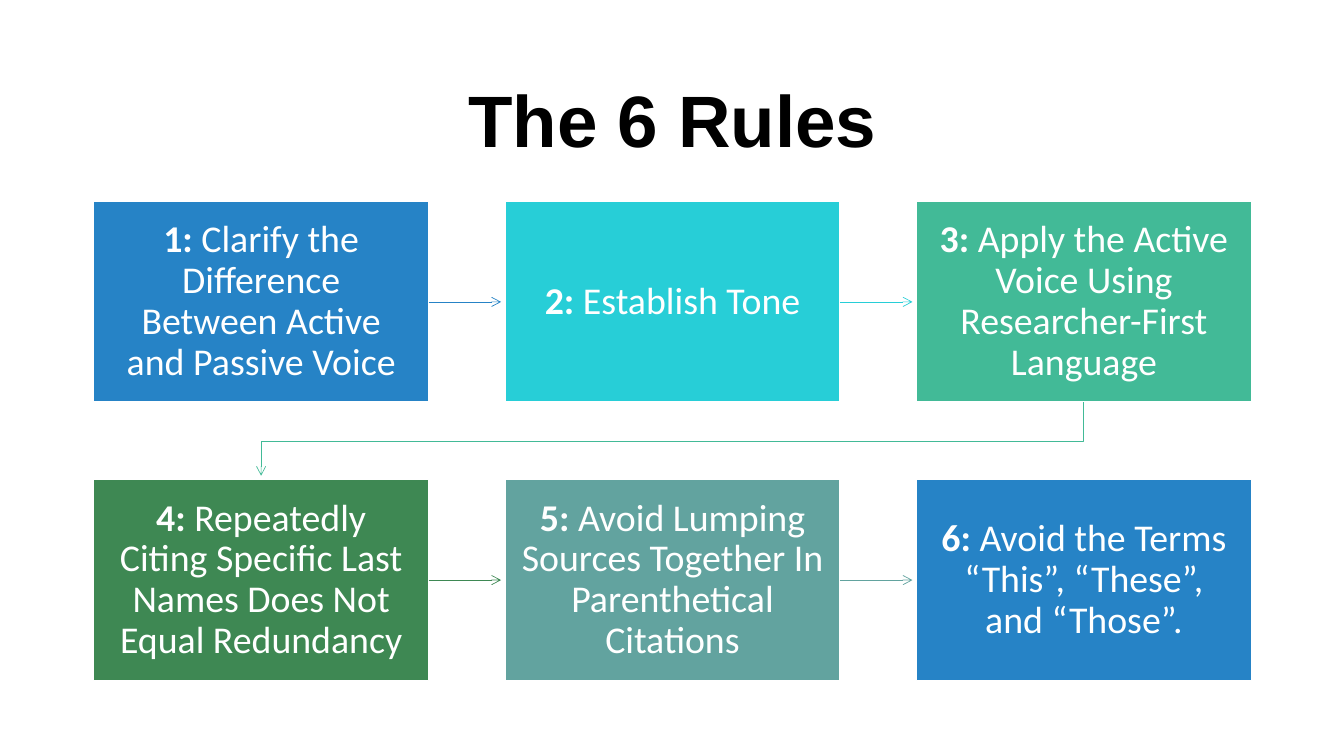
from dataclasses import dataclass

from lxml import etree
from pptx import Presentation
from pptx.dml.color import RGBColor
from pptx.dml.line import LineFormat
from pptx.enum.shapes import MSO_CONNECTOR, MSO_SHAPE
from pptx.enum.text import MSO_ANCHOR, PP_ALIGN
from pptx.oxml.ns import qn
from pptx.shapes.autoshape import Shape
from pptx.slide import Slide
from pptx.text.text import TextFrame
from pptx.util import Inches, Pt

STRAIGHT = MSO_CONNECTOR.STRAIGHT
RECTANGLE = MSO_SHAPE.RECTANGLE
MIDDLE = MSO_ANCHOR.MIDDLE
CENTER = PP_ALIGN.CENTER
RIGHT_SIDE = 3


@dataclass(frozen=True)
class Theme:
    blue: str = "2683C6"
    cyan: str = "27CED7"
    mint: str = "42BA97"
    green: str = "3E8853"
    teal: str = "62A39F"
    white: str = "FFFFFF"
    black: str = "000000"
    title_font: str = "Arial"
    rule_font: str = "Calibri"
    title_size: float = 52
    rule_size: float = 27
    border: float = 1
    arrow: float = 0.5


@dataclass(frozen=True)
class Rule:
    text: str
    color: str


THEME = Theme()
RULES = [
    Rule("Clarify the Difference Between Active and Passive Voice", THEME.blue),
    Rule("Establish Tone", THEME.cyan),
    Rule("Apply the Active Voice Using Researcher-First Language", THEME.mint),
    Rule("Repeatedly Citing Specific Last Names Does Not Equal Redundancy", THEME.green),
    Rule("Avoid Lumping Sources Together In Parenthetical Citations", THEME.teal),
    Rule("Avoid the Terms “This”, “These”, and “Those”.", THEME.blue),
]

# Grid of rule boxes, in inches
COLUMNS = 3
LEFT, TOP = 0.93, 2.0
BOX_W, BOX_H = 3.32, 1.99
STEP_X, STEP_Y = 4.08, 2.76
ARROW_GAP = 0.04

RULE_FRAME = {
    "word_wrap": True,
    "vertical_anchor": MIDDLE,
    "margin_left": Inches(0.16),
    "margin_right": Inches(0.16),
    "margin_top": Inches(0.17),
    "margin_bottom": Inches(0.17),
}
TITLE_FRAME = {"word_wrap": True, "vertical_anchor": MIDDLE}
PARAGRAPH = {"alignment": CENTER, "line_spacing": 0.9}
RULE_FONT = {"name": THEME.rule_font, "size": Pt(THEME.rule_size)}
TITLE_FONT = {"name": THEME.title_font, "size": Pt(THEME.title_size)}


def apply_format(target: object, values: dict) -> None:
    for name, value in values.items():
        setattr(target, name, value)


def write(frame: TextFrame, frame_format: dict, font_format: dict, color: str,
          parts: list[tuple[str, bool]]) -> None:
    """Fill a frame with one paragraph of (text, bold) parts."""
    apply_format(frame, frame_format)
    paragraph = frame.paragraphs[0]
    apply_format(paragraph, PARAGRAPH)
    for text, bold in parts:
        run = paragraph.add_run()
        run.text = text
        apply_format(run.font, {**font_format, "bold": bold})
        run.font.color.rgb = RGBColor.from_string(color)


def style_arrow(line: LineFormat, color: str) -> None:
    line.width = Pt(THEME.arrow)
    line.color.rgb = RGBColor.from_string(color)
    etree.SubElement(line.fill._xPr, qn("a:tailEnd"), type="arrow")


def add_title(slide: Slide) -> None:
    title = slide.shapes.add_textbox(Inches(0.92), Inches(0.61), Inches(11.5), Inches(1.24))
    write(title.text_frame, TITLE_FRAME, TITLE_FONT, THEME.black, [("The 6 Rules", True)])


def add_rule(slide: Slide, index: int, rule: Rule) -> Shape:
    row, column = divmod(index, COLUMNS)
    box = slide.shapes.add_shape(
        RECTANGLE, Inches(LEFT + column * STEP_X), Inches(TOP + row * STEP_Y),
        Inches(BOX_W), Inches(BOX_H))
    box.shadow.inherit = False
    box.fill.solid()
    box.fill.fore_color.rgb = RGBColor.from_string(rule.color)
    box.line.color.rgb = RGBColor.from_string(THEME.white)
    box.line.width = Pt(THEME.border)
    write(box.text_frame, RULE_FRAME, RULE_FONT, THEME.white,
          [(f"{index + 1}: ", True), (rule.text, False)])
    return box


def add_row_arrow(slide: Slide, box: Shape, following: Shape, color: str) -> None:
    """Straight arrow that stops just short of the following box."""
    middle = box.top + box.height // 2
    arrow = slide.shapes.add_connector(
        STRAIGHT, box.left + box.width, middle, following.left - Inches(ARROW_GAP), middle)
    arrow.begin_connect(box, RIGHT_SIDE)
    style_arrow(arrow.line, color)
    etree.SubElement(arrow._element.spPr, qn("a:effectLst"))


def add_wrap_arrow(slide: Slide, box: Shape, following: Shape, color: str) -> None:
    """Bent arrow from the end of one row to the start of the next."""
    start_x = box.left + box.width // 2
    start_y = box.top + box.height
    end_x = following.left + following.width // 2
    end_y = following.top - Inches(ARROW_GAP)
    bend_y = (start_y + following.top) // 2
    outline = slide.shapes.build_freeform(start_x, start_y)
    outline.add_line_segments([(start_x, bend_y), (end_x, bend_y), (end_x, end_y)], close=False)
    arrow = outline.convert_to_shape()
    arrow.shadow.inherit = False
    arrow.fill.background()
    style_arrow(arrow.line, color)


def main() -> None:
    deck = Presentation()
    deck.slide_width, deck.slide_height = Inches(13.33), Inches(7.5)
    slide = deck.slides.add_slide(deck.slide_layouts[6])

    add_title(slide)

    # Rule boxes
    boxes = [add_rule(slide, index, rule) for index, rule in enumerate(RULES)]

    # Arrows from each rule to the next
    for index, (box, following) in enumerate(zip(boxes, boxes[1:])):
        ends_row = (index + 1) % COLUMNS == 0
        add_arrow = add_wrap_arrow if ends_row else add_row_arrow
        add_arrow(slide, box, following, RULES[index].color)

    deck.save("out.pptx")


if __name__ == "__main__":
    main()
